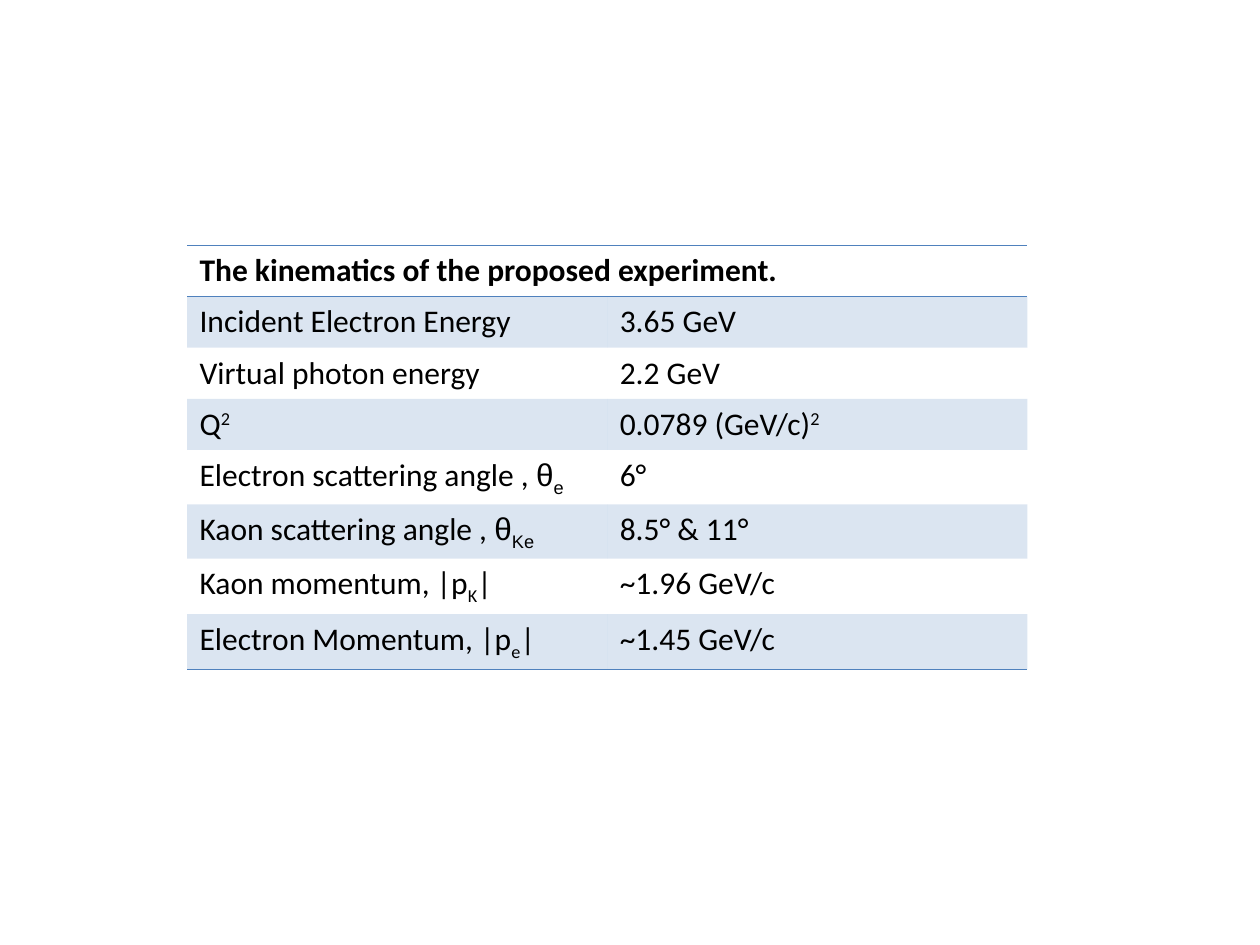
from lxml import etree
from pptx import Presentation
from pptx.dml.color import RGBColor
from pptx.oxml.ns import qn
from pptx.util import Cm, Pt

COLORS = {"text": "000000", "accent": "4F81BD"}
BODY_FONT, SYMBOL_FONT = "Calibri", "Arial"
SUPERSCRIPT, SUBSCRIPT = 30, -25
PLAIN_TABLE_STYLE = "{2D5ABB26-0587-4C30-8999-92F81FD0307C}"
BAND_OPACITY = 20
BLANK_LAYOUT = 6

HEADING = "The kinematics of the proposed experiment."
SQUARED = ("2", {"baseline": SUPERSCRIPT})
THETA = ("θ", {"font": SYMBOL_FONT})


def subscript(text, font=BODY_FONT):
    return text, {"baseline": SUBSCRIPT, "font": font}


# Each cell is a list of runs: plain text, or text with its format
ROWS = [
    (["Incident Electron Energy"], ["3.65 GeV"]),
    (["Virtual photon energy"], ["2.2 GeV"]),
    (["Q", SQUARED], ["0.0789 (GeV/c)", SQUARED]),
    (["Electron scattering angle , ", THETA, subscript("e", SYMBOL_FONT)], ["6°"]),
    (["Kaon scattering angle , ", THETA, subscript("Ke", SYMBOL_FONT)], ["8.5° & 11°"]),
    (["Kaon momentum, |p", subscript("K"), "|"], ["~1.96 GeV/c"]),
    (["Electron Momentum, |p", subscript("e"), "|"], ["~1.45 GeV/c"]),
]


def add_run(paragraph, text, font=BODY_FONT, size=18, bold=False, baseline=0):
    run = paragraph.add_run()
    run.text = text
    run.font.name = font
    run.font.size = Pt(size)
    run.font.bold = bold
    run.font.color.rgb = RGBColor.from_string(COLORS["text"])
    if baseline:
        run.font._element.set("baseline", str(baseline * 1000))


class SlideBuilder:
    """Holds the table style and the current slide."""

    def __init__(self, slide, line_width=1):
        self.slide = slide
        self.line_width = Pt(line_width)

    def table(self, left, top, column_width, row_height, row_count, column_count):
        frame = self.slide.shapes.add_table(
            row_count, column_count, left, top,
            column_width * column_count, row_height * row_count)
        table = frame.table
        table.first_row = table.horz_banding = False
        table._tbl.tblPr.find(qn("a:tableStyleId")).text = PLAIN_TABLE_STYLE
        for column in table.columns:
            column.width = column_width
        for row in table.rows:
            row.height = row_height
        return table

    def border(self, cell, side):
        properties = cell._tc.get_or_add_tcPr()
        line = etree.SubElement(properties, qn(f"a:ln{side}"), w=str(self.line_width))
        fill = etree.SubElement(line, qn("a:solidFill"))
        etree.SubElement(fill, qn("a:srgbClr"), val=COLORS["accent"])

    def band(self, cell):
        cell.fill.solid()
        cell.fill.fore_color.rgb = RGBColor.from_string(COLORS["accent"])
        color = cell._tc.tcPr.find(qn("a:solidFill")).find(qn("a:srgbClr"))
        etree.SubElement(color, qn("a:alpha"), val=str(BAND_OPACITY * 1000))

    def cell(self, cell, runs, borders="", banded=False):
        paragraph = cell.text_frame.paragraphs[0]
        for run in runs:
            text, style = (run, {}) if isinstance(run, str) else run
            add_run(paragraph, text, **style)
        for side in borders:
            self.border(cell, side)
        if banded:
            self.band(cell)
        else:
            cell.fill.background()


def main():
    presentation = Presentation()
    presentation.slide_width, presentation.slide_height = Cm(25.4), Cm(19.05)
    slide = presentation.slides.add_slide(presentation.slide_layouts[BLANK_LAYOUT])
    builder = SlideBuilder(slide)
    table = builder.table(Cm(3.77), Cm(4.95), Cm(8.47), Cm(1.03), len(ROWS) + 1, 2)

    # Heading across both columns
    table.cell(0, 0).merge(table.cell(0, 1))
    builder.cell(table.cell(0, 0), [(HEADING, {"bold": True})], borders="TB")
    builder.cell(table.cell(0, 1), [], borders="TB")

    # Quantities, with every other row banded
    for row_index, row in enumerate(ROWS, start=1):
        for column_index, runs in enumerate(row):
            builder.cell(table.cell(row_index, column_index), runs,
                         borders="B" if row_index == len(ROWS) else "",
                         banded=row_index % 2 == 1)

    presentation.save("out.pptx")


if __name__ == "__main__":
    main()
